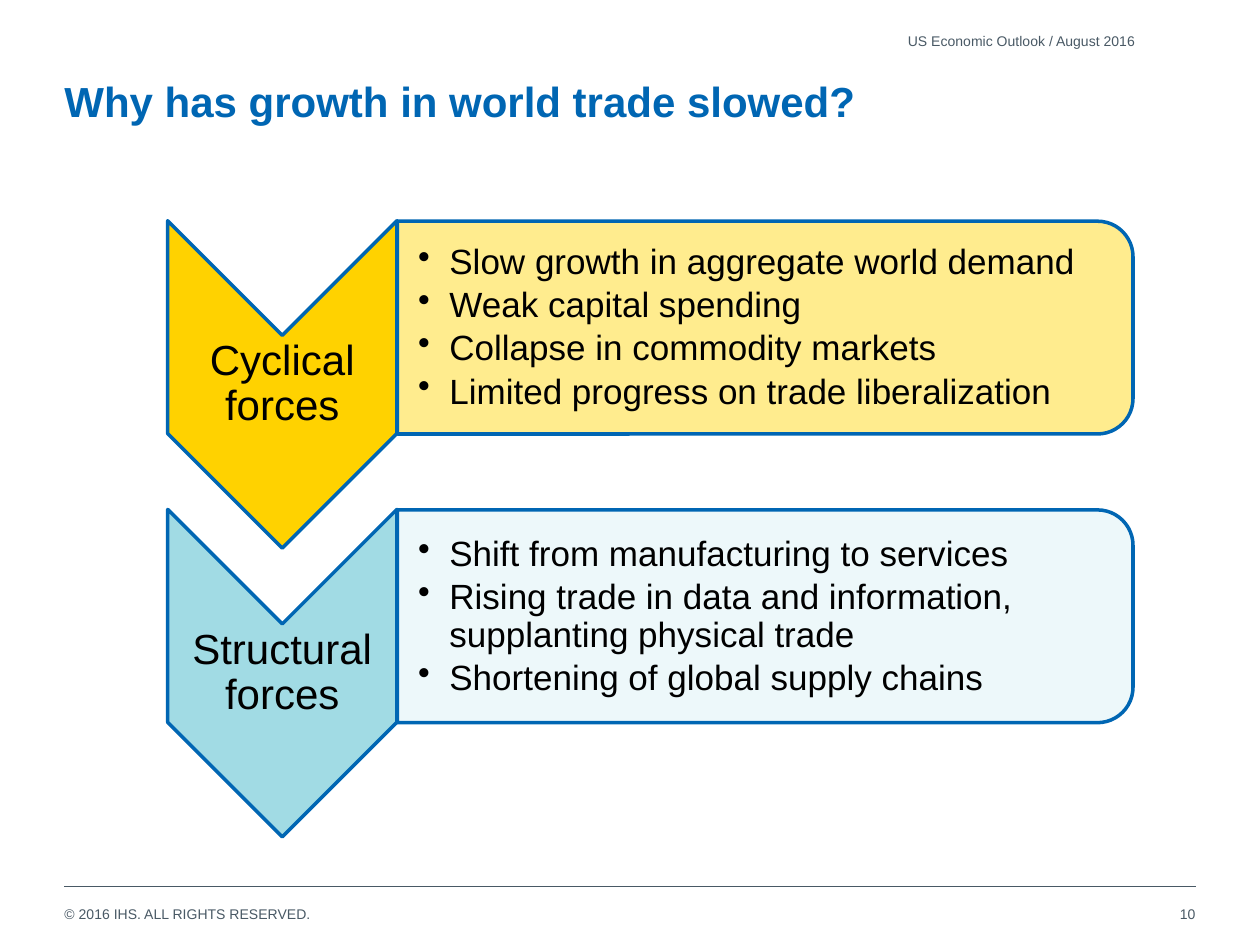
import pptx
import pptx.util
import pptx.dml.color
import pptx.enum.shapes
import pptx.enum.text
import pptx.oxml.ns
import lxml.etree

Cm, Pt = pptx.util.Cm, pptx.util.Pt
RGB = pptx.dml.color.RGBColor.from_string
SHAPE = pptx.enum.shapes.MSO_SHAPE
ALIGN = pptx.enum.text.PP_ALIGN
ANCHOR = pptx.enum.text.MSO_ANCHOR
qn = pptx.oxml.ns.qn

COLORS = {"blue": "0066B3", "gray": "495965", "black": "000000",
          "yellow": "FFD200", "pale_yellow": "FFEA82",
          "aqua": "A1DBE4", "pale_aqua": "ECF8FA"}


def write(sp, box, lines, size, color, bold=False, anchor=ANCHOR.MIDDLE,
          align=ALIGN.LEFT, margins=(0, 0, 0, 0)):
    """Place a text shape and fill it with one paragraph per line."""
    sp.left, sp.top, sp.width, sp.height = [Cm(v) for v in box]
    tf = sp.text_frame
    frame = {"word_wrap": True, "auto_size": pptx.enum.text.MSO_AUTO_SIZE.NONE,
             "vertical_anchor": anchor}
    sides = ("margin_left", "margin_top", "margin_right", "margin_bottom")
    frame.update(zip(sides, [Cm(m) for m in margins]))
    for name, value in frame.items():
        setattr(tf, name, value)
    tf.text = "\n".join(lines)
    for p in tf.paragraphs:
        p.alignment = align
        font = p.runs[0].font
        for name, value in {"name": "Arial", "size": Pt(size), "bold": bold}.items():
            setattr(font, name, value)
        font.color.rgb = RGB(COLORS[color])
    return tf


def add_turned_shape(kind, box, fill):
    """Add an outlined shape rotated a quarter turn clockwise."""
    sp = s.shapes.add_shape(kind, *[Cm(v) for v in box])
    sp.rotation = 90
    sp.shadow.inherit = False
    sp.fill.solid()
    sp.fill.fore_color.rgb = RGB(COLORS[fill])
    sp.line.color.rgb = RGB(COLORS["blue"])
    sp.line.width = Pt(2)
    return sp


prs = pptx.Presentation()
prs.slide_width, prs.slide_height = Cm(25.4), Cm(19.05)
s = prs.slides.add_slide(prs.slide_layouts[5])

# Title, header and footer
write(s.shapes.title, (1.3, 1.52, 22.8, 2.21),
      ["Why has growth in world trade slowed?"], 24, "blue", True, ANCHOR.TOP)

rule = s.shapes.add_connector(pptx.enum.shapes.MSO_CONNECTOR.STRAIGHT,
                              Cm(1.3), Cm(17.86), Cm(24.1), Cm(17.86))
rule.line.color.rgb = RGB(COLORS["gray"])
rule.line.width = Pt(0.5)
lxml.etree.SubElement(rule._element.spPr, qn("a:effectLst"))

for text, box, align in [
    ("© 2016 IHS. ALL RIGHTS RESERVED.", (1.3, 18.26, 17.4, 0.33), ALIGN.LEFT),
    ("10", (18.36, 17.91, 5.74, 1.02), ALIGN.RIGHT),
    ("US Economic Outlook / August 2016", (1.3, 0.53, 21.59, 0.61), ALIGN.RIGHT),
]:
    write(s.shapes.add_textbox(0, 0, 0, 0), box, [text], 8, "gray", align=align)

# One chevron and one bulleted panel per group of forces
forces = [
    ("Cyclical forces", "yellow", "pale_yellow",
     ["Slow growth in aggregate world demand",
      "Weak capital spending",
      "Collapse in commodity markets",
      "Limited progress on trade liberalization"]),
    ("Structural forces", "aqua", "pale_aqua",
     ["Shift from manufacturing to services",
      "Rising trade in data and information, supplanting physical trade",
      "Shortening of global supply chains"]),
]
for i, (label, strong, pale, points) in enumerate(forces):
    dy = i * 5.82
    add_turned_shape(SHAPE.CHEVRON, (2.39, 5.44 + dy, 6.6, 4.62), strong)
    tf = write(s.shapes.add_textbox(0, 0, 0, 0), (3.38, 6.76 + dy, 4.62, 1.98),
               [label], 24, "black", align=ALIGN.CENTER, margins=[0.05] * 4)
    tf.paragraphs[0].line_spacing = 0.9
    tf.paragraphs[0].space_after = Pt(8.4)

    panel = add_turned_shape(SHAPE.ROUND_2_SAME_RECTANGLE,
                             (13.28, -0.81 + dy, 4.29, 14.83), pale)
    color = panel._element.spPr.find(qn("a:solidFill"))[0]
    lxml.etree.SubElement(color, qn("a:alpha"), val="90000")

    tf = write(s.shapes.add_textbox(0, 0, 0, 0), (8.03, 4.67 + dy, 14.6, 3.89),
               points, 20, "black", margins=(0.4, 0.03, 0.03, 0.03))
    for p in tf.paragraphs:
        pPr = p._p.get_or_add_pPr()
        pPr.set("marL", str(Cm(0.63)))
        pPr.set("indent", str(-Cm(0.63)))
        lxml.etree.SubElement(pPr, qn("a:buChar"), char="•")
        p.line_spacing = 0.9
        p.space_after = Pt(3)

prs.save("out.pptx")
